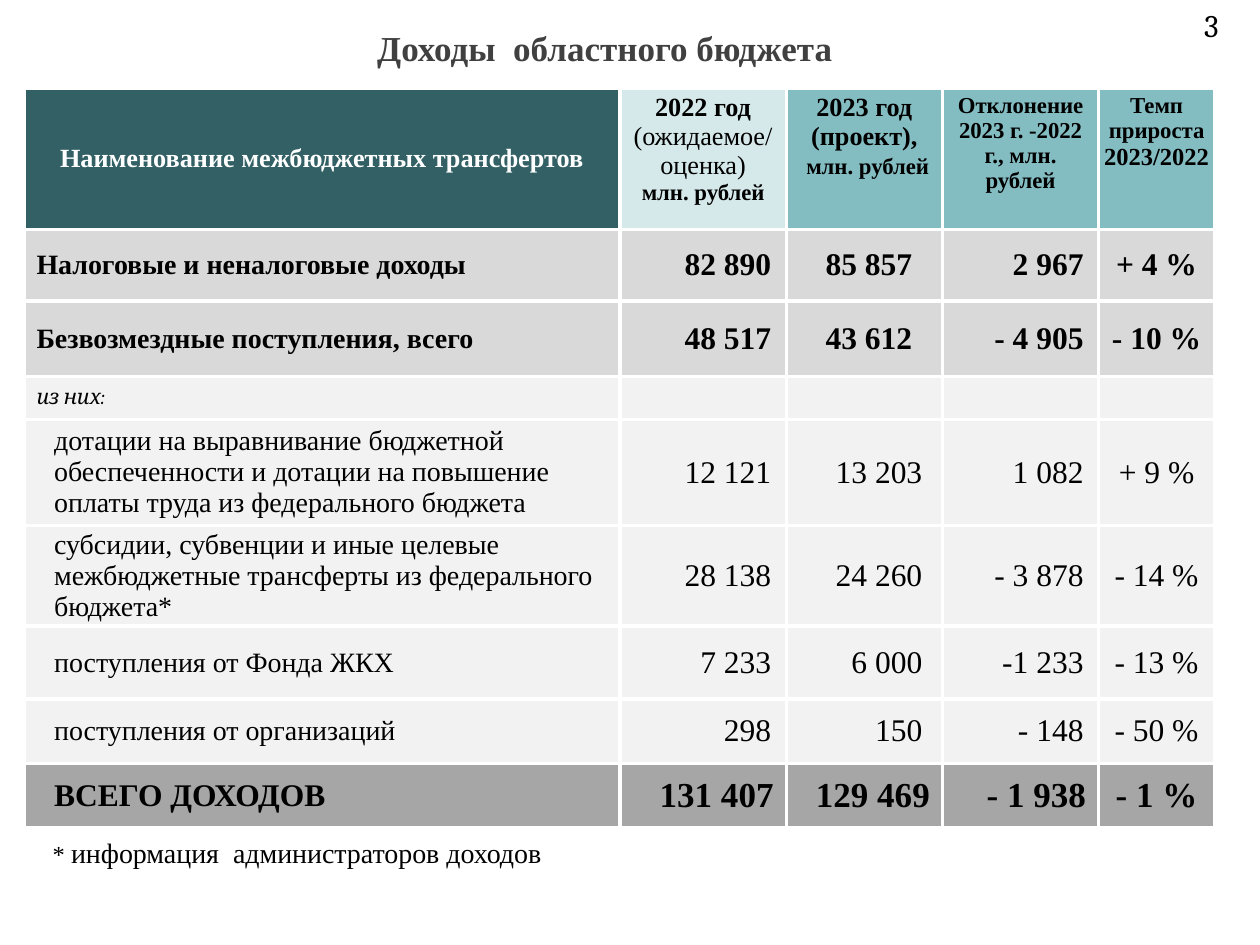
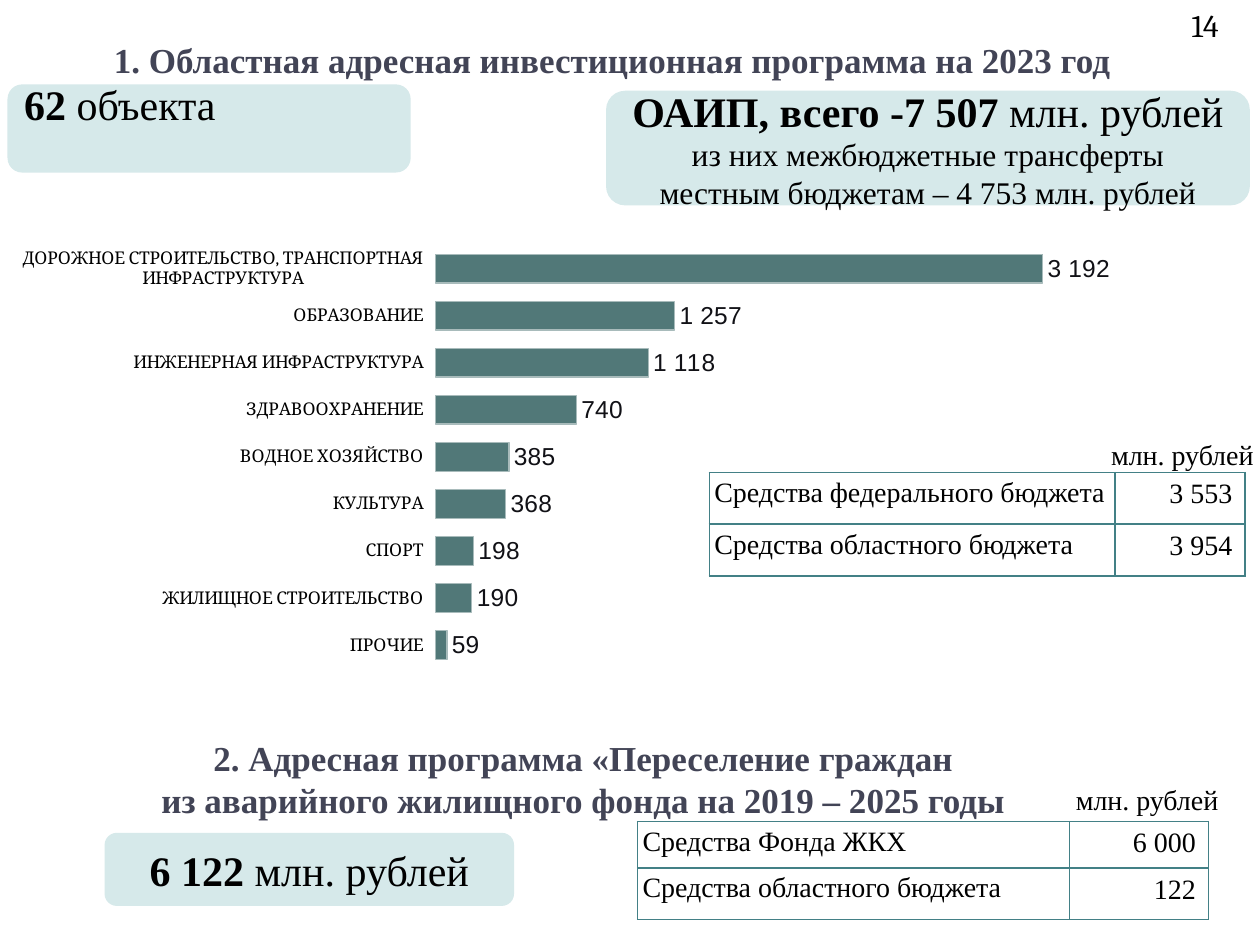
from pptx import Presentation
from pptx.chart.data import CategoryChartData
from pptx.dml.color import RGBColor
from pptx.enum.chart import XL_CHART_TYPE as ChartType, XL_LABEL_POSITION as LabelPos, XL_TICK_MARK as Tick
from pptx.enum.shapes import MSO_SHAPE as Preset
from pptx.enum.text import MSO_ANCHOR as Anchor, MSO_AUTO_SIZE as AutoSize, PP_ALIGN as Align
from pptx.oxml import parse_xml
from pptx.oxml.ns import nsdecls, qn
from pptx.util import Pt

PX = 9144
SERIF, CAMBRIA, SANS = "Times New Roman", "Cambria", "Arial"
BLACK, WHITE, GREY_TITLE, PURPLE_TITLE = "000000", "FFFFFF", "404040", "424456"
DEEP_TEAL, MID_TEAL, PALE_TEAL, BAR_TEAL, GRID_TEAL = "326065", "83BCC1", "D6E9EA", "517878", "438086"
BAR_EDGE = "A8BBBB"
SUBTOTAL, DETAIL, TOTAL = "D9D9D9", "F2F2F2", "A6A6A6"
LEFT, CENTER, RIGHT = Align.LEFT, Align.CENTER, Align.RIGHT


def rgb(hex_color):
    return RGBColor.from_string(hex_color)


def px(*lengths):
    return [length * PX for length in lengths]


def set_font(font, size, bold, color=BLACK, face=SERIF, italic=False):
    font.size, font.bold, font.italic, font.name = Pt(size), bold, italic, face
    font.color.rgb = rgb(color)


def write(frame, paragraphs, align=LEFT, color=BLACK, face=SERIF, italic=False):
    for index, pieces in enumerate(paragraphs):
        paragraph = frame.paragraphs[0] if index == 0 else frame.add_paragraph()
        paragraph.alignment = align
        for text, size, bold in pieces:
            run = paragraph.add_run()
            run.text = text
            set_font(run.font, size, bold, color, face, italic)
        if len(pieces) == 1:
            set_font(paragraph.font, size, bold, color, face, italic)


def set_margins(holder, left, top, right, bottom):
    holder.margin_left, holder.margin_top, holder.margin_right, holder.margin_bottom = px(left, top, right, bottom)


def add_text(slide, box, paragraphs, align=LEFT, anchor=Anchor.TOP, wrap=True, **style):
    frame = slide.shapes.add_textbox(*px(*box)).text_frame
    frame.word_wrap, frame.vertical_anchor = wrap, anchor
    write(frame, paragraphs, align, **style)


def add_title(slide, box, text, color):
    title = slide.shapes.title
    title.left, title.top, title.width, title.height = px(*box)
    frame = title.text_frame
    frame.auto_size, frame.vertical_anchor = AutoSize.NONE, Anchor.MIDDLE
    write(frame, [[(text, 20, True)]], CENTER, color)


def add_page_number(slide, number):
    add_text(slide, (894, 0, 83, 40), [[(number, 18, False)]], RIGHT, Anchor.BOTTOM, face=CAMBRIA)


def add_callout(slide, box, paragraphs, align=CENTER, margins=(10, 5, 10, 5)):
    callout = slide.shapes.add_shape(Preset.ROUNDED_RECTANGLE, *px(*box))
    callout.shadow.inherit = False
    callout.fill.solid()
    callout.fill.fore_color.rgb = rgb(PALE_TEAL)
    callout.line.fill.background()
    frame = callout.text_frame
    frame.word_wrap, frame.vertical_anchor = True, Anchor.MIDDLE
    set_margins(frame, *margins)
    write(frame, paragraphs, align)


def add_grid(slide, left, top, columns, rows):
    box = px(left, top, sum(columns), sum(rows))
    table = slide.shapes.add_table(len(rows), len(columns), *box).table
    table.first_row = table.horz_banding = False
    for column, width in zip(table.columns, columns):
        column.width = width * PX
    for row, height in zip(table.rows, rows):
        row.height = height * PX
    return table


def format_cell(cell, border, weight, fill=None, anchor=Anchor.TOP, margins=(10, 5, 10, 5)):
    properties = cell._tc.get_or_add_tcPr()
    for side in "LRTB":
        properties.append(parse_xml(
            f'<a:ln{side} {nsdecls("a")} w="{Pt(weight)}"><a:solidFill>'
            f'<a:srgbClr val="{border}"/></a:solidFill></a:ln{side}>'))
    if fill:
        cell.fill.solid()
        cell.fill.fore_color.rgb = rgb(fill)
    else:
        cell.fill.background()
    cell.vertical_anchor = anchor
    set_margins(cell, *margins)


def add_income_header(table):
    headings = [
        (DEEP_TEAL, 10, [[("Наименование межбюджетных трансфертов", 15, True)]]),
        (PALE_TEAL, 4, [[("2022 год ", 15, True), ("(ожидаемое/ оценка)", 15, False)], [("млн. рублей", 13, True)]]),
        (MID_TEAL, 4, [[("2023 год", 15, True)], [("(проект),", 15, True)],
                       [(" ", 15, True), ("млн. рублей", 13, True)]]),
        (MID_TEAL, 5, [[("Отклонение 2023 г. -2022 г., млн. рублей", 13, True)]]),
        (MID_TEAL, 3, [[("Темп прироста ", 13, True), ("2023/2022", 14, True)]]),
    ]
    for column, (fill, side, heading) in enumerate(headings):
        cell = table.cell(0, column)
        first = column == 0
        format_cell(cell, WHITE, 2.25, fill, Anchor.MIDDLE if first else Anchor.TOP, (side, 4, side, 4))
        write(cell.text_frame, heading, CENTER, WHITE if first else BLACK)


def add_income_table(slide, left, top):
    table = add_grid(slide, left, top, [473, 132, 124, 124, 92], [112, 57, 60, 34, 84, 58, 58, 51, 51])
    add_income_header(table)
    kinds = {
        SUBTOTAL: (10, 16, 18, True, (12, 24, 12, 1)),
        DETAIL: (24, 16, 18, False, (12, 16, 12, 1)),
        TOTAL: (24, 18, 20, True, (10, 10, 10, 1)),
    }
    incomes = [
        (SUBTOTAL, "Налоговые и неналоговые доходы", "82 890", "85 857", "2 967", "+ 4 %"),
        (SUBTOTAL, "Безвозмездные поступления, всего", "48 517", "43 612", "- 4 905", "- 10 %"),
        (DETAIL, "из них:"),
        (DETAIL, "дотации на выравнивание бюджетной обеспеченности и дотации на повышение оплаты труда "
                 "из федерального бюджета", "12 121", "13 203", "1 082", "+ 9 %"),
        (DETAIL, "субсидии, субвенции и иные целевые межбюджетные трансферты из федерального бюджета*",
         "28 138", "24 260", "- 3 878", "- 14 %"),
        (DETAIL, "поступления от Фонда ЖКХ", "7 233", "6 000", "-1 233", "- 13 %"),
        (DETAIL, "поступления от организаций", "298", "150", "- 148", "- 50 %"),
        (TOTAL, "ВСЕГО ДОХОДОВ", "131 407", "129 469", "- 1 938", "- 1 %"),
    ]
    for row, (fill, name, *amounts) in enumerate(incomes, 1):
        indent, name_size, amount_size, bold, right_margins = kinds[fill]
        name_cell = table.cell(row, 0)
        format_cell(name_cell, WHITE, 2.25, fill, Anchor.MIDDLE, (indent if amounts else 10, 0, 0, 0))
        if amounts:
            write(name_cell.text_frame, [[(name, name_size, bold)]])
        else:
            write(name_cell.text_frame, [[(name, 12, False)]], face=CAMBRIA, italic=True)
        for column, right in enumerate(right_margins, 1):
            cell = table.cell(row, column)
            format_cell(cell, WHITE, 2.25, fill, Anchor.MIDDLE, (1, 0, right, 0))
            if amounts:
                align = CENTER if column == 4 else RIGHT
                write(cell.text_frame, [[(amounts[column - 1], amount_size, bold)]], align)


def add_funding_table(slide, left, top, columns, rows, sources, unit_box):
    table = add_grid(slide, left, top, columns, rows)
    for row, (source, amount) in enumerate(sources):
        source_cell, amount_cell = table.cell(row, 0), table.cell(row, 1)
        format_cell(source_cell, GRID_TEAL, 1, margins=(4, 4, 4, 4))
        write(source_cell.text_frame, [[(source, 16, False)]])
        format_cell(amount_cell, GRID_TEAL, 1)
        write(amount_cell.text_frame, [[(amount, 16, False)]], RIGHT)
    add_text(slide, unit_box, [[("млн. рублей", 16, False)]], wrap=False)


def place_plot(chart, **fractions):
    plot_area = chart.element.find(".//" + qn("c:plotArea"))
    for layout in plot_area.findall(qn("c:layout")):
        plot_area.remove(layout)
    modes = '<c:layoutTarget val="inner"/><c:xMode val="edge"/><c:yMode val="edge"/>'
    sides = "".join(f'<c:{side} val="{part}"/>' for side, part in fractions.items())
    plot_area.insert(0, parse_xml(
        f'<c:layout {nsdecls("c")}><c:manualLayout>{modes}{sides}</c:manualLayout></c:layout>'))


def add_program_chart(slide, box):
    spending = {
        "": None,
        "ПРОЧИЕ": 59,
        "ЖИЛИЩНОЕ СТРОИТЕЛЬСТВО": 190,
        "СПОРТ": 198,
        "КУЛЬТУРА": 368,
        "ВОДНОЕ ХОЗЯЙСТВО": 385,
        "ЗДРАВООХРАНЕНИЕ": 740,
        "ИНЖЕНЕРНАЯ ИНФРАСТРУКТУРА": 1118,
        "ОБРАЗОВАНИЕ": 1257,
        "ДОРОЖНОЕ СТРОИТЕЛЬСТВО, ТРАНСПОРТНАЯ ИНФРАСТРУКТУРА": 3192,
    }
    data = CategoryChartData()
    data.categories = list(spending)
    data.add_series("Series 1", [*spending.values(), None, None, None])
    chart = slide.shapes.add_chart(ChartType.BAR_CLUSTERED, *px(*box), data).chart
    chart.has_legend = chart.has_title = False
    set_font(chart.font, 10, False, face=CAMBRIA)
    place_plot(chart, x=0.383, y=0.005, w=0.585, h=0.941)

    names, amounts = chart.category_axis, chart.value_axis
    names.format.line.fill.background()
    names.major_tick_mark = Tick.OUTSIDE
    names.has_major_gridlines = amounts.has_major_gridlines = False
    amounts.visible = False
    amounts.minimum_scale, amounts.maximum_scale = 0, 3500

    plot = chart.plots[0]
    plot.gap_width, plot.vary_by_categories = 65, False
    bars = plot.series[0].format
    bars.fill.solid()
    bars.fill.fore_color.rgb = rgb(BAR_TEAL)
    bars.line.color.rgb = rgb(BAR_EDGE)
    bars.line.width = Pt(0.75)
    plot.has_data_labels = True
    labels = plot.data_labels
    labels.show_value, labels.position = True, LabelPos.OUTSIDE_END
    labels.number_format, labels.number_format_is_linked = "[>=1000]#\\ ##0;0", False
    set_font(labels.font, 14, False, "111116", SANS)


def build_income_slide(slide):
    add_page_number(slide, "3")
    add_income_table(slide, 19, 70)
    add_title(slide, (1, 14, 958, 47), "Доходы  областного бюджета", GREY_TITLE)
    add_text(slide, (32, 658, 934, 37), [[("* ", 14, False), ("информация  администраторов доходов", 16, False)]])


def build_program_slide(slide):
    add_program_chart(slide, (0, 80, 903, 516))
    add_title(slide, (36, 28, 900, 39), "1. Областная адресная инвестиционная программа на 2023 год", PURPLE_TITLE)
    add_callout(slide, (6, 67, 320, 70), [[("62 ", 24, True), ("объекта", 24, False)]], LEFT, (10, 0, 10, 39))
    add_callout(slide, (481, 72, 511, 91), [
        [("ОАИП, всего -7 507 ", 24, True), ("млн. рублей", 24, False)],
        [("из них межбюджетные трансферты", 18, False)],
        [("местным бюджетам – 4 753 млн. рублей", 18, False)],
    ])
    add_funding_table(slide, 563, 375, [322, 103], [41, 41], [
        ("Средства федерального бюджета", "3 553"),
        ("Средства областного бюджета", "3 954"),
    ], (872, 342, 135, 37))
    add_page_number(slide, "14")
    add_text(slide, (1, 590, 924, 55), [
        [("2. Адресная программа «Переселение граждан", 20, True)],
        [("из аварийного жилищного фонда на 2019 – 2025 годы", 20, True)],
    ], CENTER, Anchor.MIDDLE, color=PURPLE_TITLE)
    add_funding_table(slide, 506, 652, [343, 110], [36, 41], [
        ("Средства Фонда ЖКХ", "6 000"),
        ("Средства областного бюджета", "122"),
    ], (844, 616, 135, 37))
    add_callout(slide, (83, 661, 325, 58), [[("6 122 ", 24, True), ("млн. рублей", 24, False)]])


def main():
    deck = Presentation()
    deck.slide_width, deck.slide_height = px(1000, 750)
    title_only = deck.slide_layouts[5]
    for build in (build_income_slide, build_program_slide):
        build(deck.slides.add_slide(title_only))
    deck.save("out.pptx")


if __name__ == "__main__":
    main()
